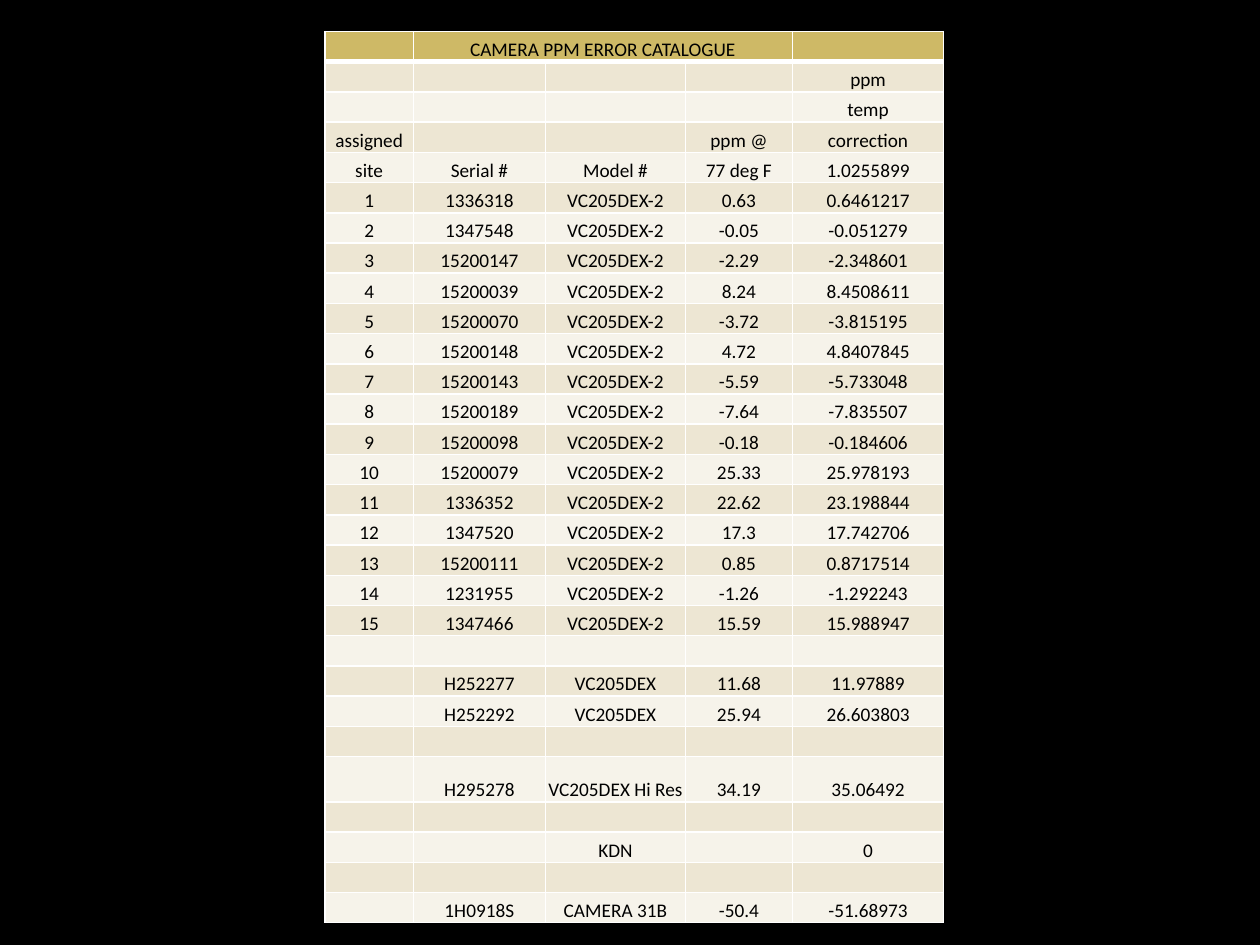
from lxml import etree
from pptx import Presentation
from pptx import util as u
from pptx.dml.color import RGBColor
from pptx.enum import text
from pptx.oxml import ns

BLACK = RGBColor(0x00, 0x00, 0x00)
WHITE = RGBColor(0xFF, 0xFF, 0xFF)
GOLD = RGBColor(0xCE, 0xB9, 0x66)
SAND = RGBColor(0xED, 0xE6, 0xD3)
CREAM = RGBColor(0xF6, 0xF3, 0xEA)

COLUMN_WIDTHS = [0.7, 1.05, 1.11, 0.85, 1.2]
ROW_HEIGHT = 0.24
TALL_ROW_HEIGHT = 0.36
MODEL = "VC205DEX"
HIGH_RES_MODEL = f"{MODEL} Hi Res"
EMPTY = [""] * 5

HEADINGS = [
    ["", "CAMERA PPM ERROR CATALOGUE", "", "", ""],
    ["", "", "", "", "ppm"],
    ["", "", "", "", "temp"],
    ["assigned", "", "", "ppm @", "correction"],
    ["site", "Serial #", "Model #", "77 deg F", "1.0255899"],
]
SITE_CAMERAS = [
    ("1336318", "0.63", "0.6461217"),
    ("1347548", "-0.05", "-0.051279"),
    ("15200147", "-2.29", "-2.348601"),
    ("15200039", "8.24", "8.4508611"),
    ("15200070", "-3.72", "-3.815195"),
    ("15200148", "4.72", "4.8407845"),
    ("15200143", "-5.59", "-5.733048"),
    ("15200189", "-7.64", "-7.835507"),
    ("15200098", "-0.18", "-0.184606"),
    ("15200079", "25.33", "25.978193"),
    ("1336352", "22.62", "23.198844"),
    ("1347520", "17.3", "17.742706"),
    ("15200111", "0.85", "0.8717514"),
    ("1231955", "-1.26", "-1.292243"),
    ("1347466", "15.59", "15.988947"),
]
SPARE_CAMERAS = [
    EMPTY,
    ["", "H252277", MODEL, "11.68", "11.97889"],
    ["", "H252292", MODEL, "25.94", "26.603803"],
    EMPTY,
    ["", "H295278", HIGH_RES_MODEL, "34.19", "35.06492"],
    EMPTY,
    ["", "", "KDN", "", "0"],
    EMPTY,
    ["", "1H0918S", "CAMERA 31B", "-50.4", "-51.68973"],
]


class SlideBuilder:
    font_name = "Calibri"
    font_size = u.Pt(11)

    def __init__(self, presentation):
        self.slide = presentation.slides.add_slide(presentation.slide_layouts[6])

    def background(self, color):
        fill = self.slide.background.fill
        fill.solid()
        fill.fore_color.rgb = color

    def table(self, left, top, widths, heights, rows):
        shape = self.slide.shapes.add_table(
            len(rows), len(widths), u.Inches(left), u.Inches(top),
            u.Inches(sum(widths)), u.Inches(sum(heights)))
        table = shape.table
        for column, width in zip(table.columns, widths):
            column.width = u.Inches(width)
        for row, height in zip(table.rows, heights):
            row.height = u.Inches(height)
        for row_index, values in enumerate(rows):
            color = GOLD if row_index == 0 else (CREAM, SAND)[row_index % 2]
            for column_index, value in enumerate(values):
                cell = table.cell(row_index, column_index)
                self.borders(cell, 3 if row_index == 1 else 1,
                             3 if row_index == 0 else 1)
                self.cell(cell, value, color)
        return table

    def cell(self, cell, value, color):
        cell.fill.solid()
        cell.fill.fore_color.rgb = color
        cell.vertical_anchor = text.MSO_ANCHOR.BOTTOM
        cell.margin_left = cell.margin_right = 0
        cell.margin_top = cell.margin_bottom = 0
        paragraph = cell.text_frame.paragraphs[0]
        paragraph.text = value
        paragraph.alignment = text.PP_ALIGN.CENTER
        for run in paragraph.runs:
            run.font.name = self.font_name
            run.font.size = self.font_size
            run.font.bold = False
            run.font.color.rgb = BLACK
        if not value:
            end = etree.SubElement(paragraph._p, ns.qn("a:endParaRPr"))
            end.set("sz", str(int(self.font_size.pt * 100)))

    def borders(self, cell, top, bottom):
        properties = cell._tc.get_or_add_tcPr()
        for side, width in (("L", 1), ("R", 1), ("T", top), ("B", bottom)):
            line = etree.SubElement(properties, ns.qn(f"a:ln{side}"))
            line.set("w", str(u.Pt(width)))
            fill = etree.SubElement(line, ns.qn("a:solidFill"))
            etree.SubElement(fill, ns.qn("a:srgbClr")).set("val", str(WHITE))


def main():
    presentation = Presentation()
    presentation.slide_width = u.Inches(10)
    presentation.slide_height = u.Inches(7.5)

    site_rows = [[str(site), serial, f"{MODEL}-2", error, corrected]
                 for site, (serial, error, corrected) in enumerate(SITE_CAMERAS, 1)]
    rows = HEADINGS + site_rows + SPARE_CAMERAS
    heights = [TALL_ROW_HEIGHT if HIGH_RES_MODEL in row else ROW_HEIGHT
               for row in rows]

    builder = SlideBuilder(presentation)
    builder.background(BLACK)
    table = builder.table(2.58, 0.25, COLUMN_WIDTHS, heights, rows)
    table.cell(0, 1).merge(table.cell(0, 3))
    presentation.save("out.pptx")


if __name__ == "__main__":
    main()
